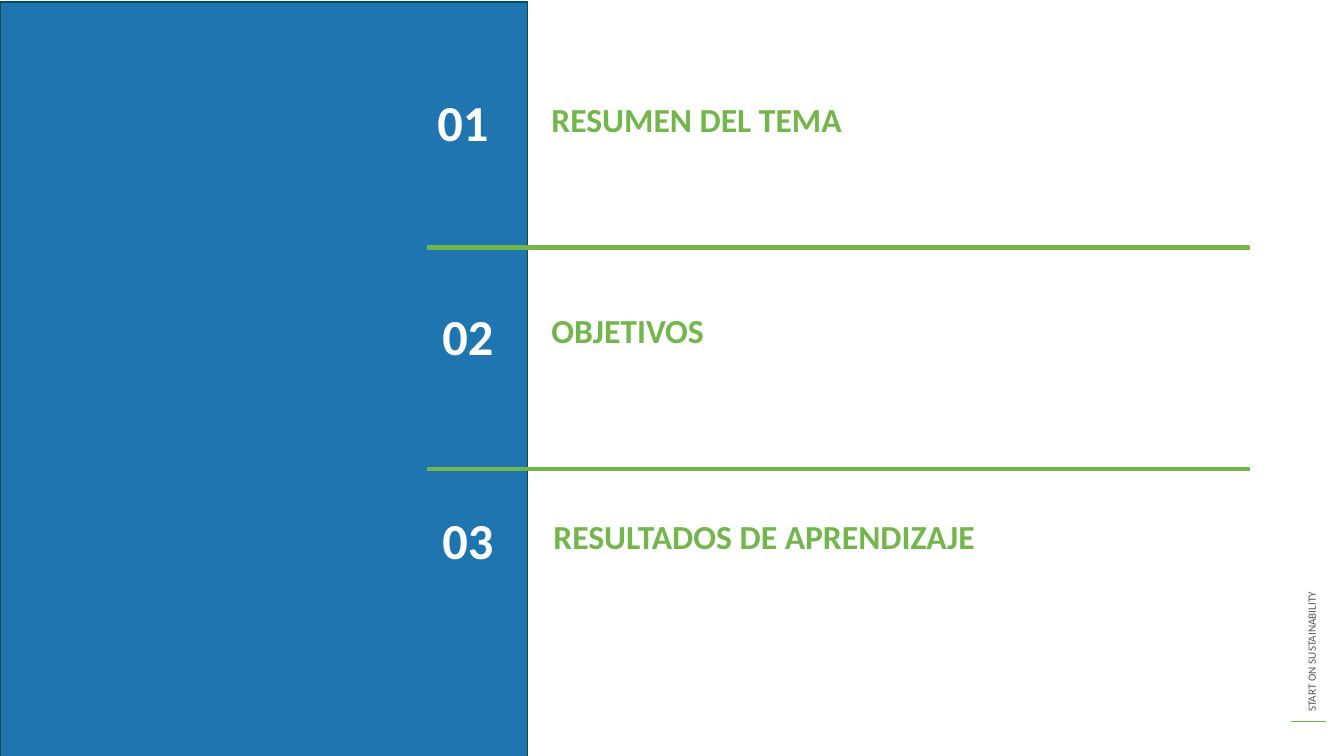
from lxml import etree
from pptx import Presentation
from pptx.dml.color import RGBColor
from pptx.enum.shapes import MSO_CONNECTOR, MSO_SHAPE
from pptx.enum.text import MSO_ANCHOR
from pptx.oxml.ns import qn
from pptx.util import Inches, Pt

RECTANGLE = MSO_SHAPE.RECTANGLE
STRAIGHT = MSO_CONNECTOR.STRAIGHT
TOP = MSO_ANCHOR.TOP

FONT = "Calibri"
BLUE, TEAL, GREEN = "1E75B0", "054F50", "73B64B"
GREY, WHITE = "595959", "FFFFFF"

# Wording, then left and top of the number and of the heading
AGENDA = [
    ("01", (4.24, 0.67), "RESUMEN DEL TEMA", (5.37, 0.93)),
    ("02", (4.29, 2.8), "OBJETIVOS", (5.37, 3.03)),
    ("03", (4.29, 4.82), "RESULTADOS DE APRENDIZAJE", (5.39, 5.07)),
]
DIVIDER_TOPS = (2.44, 4.64)


def colour(value):
    return RGBColor.from_string(value)


def add_text(page, box, words, size, ink, bold=False, spacing=1.0):
    label = page.shapes.add_textbox(*map(Inches, box))
    frame = label.text_frame
    frame.word_wrap = True
    frame.vertical_anchor = TOP
    para = frame.paragraphs[0]
    para.line_spacing = spacing
    span = para.add_run()
    span.text = words
    for name, value in {"name": FONT, "size": Pt(size), "bold": bold}.items():
        setattr(span.font, name, value)
    span.font.color.rgb = colour(ink)
    return label


def add_bar(page, box, fill, outline):
    bar = page.shapes.add_shape(RECTANGLE, *map(Inches, box))
    bar.shadow.inherit = False
    bar.fill.solid()
    bar.fill.fore_color.rgb = colour(fill)
    bar.line.color.rgb = colour(outline)
    bar.line.width = Pt(1)


def add_side_mark(page, box):
    """Place the upward-reading tagline and the short rule at the foot of the box."""
    left, top, width, height = box
    length, thickness = 4.46, 0.24
    bottom = top + height
    centre_x = left + 0.21
    tagline = add_text(
        page,
        (centre_x - length / 2, bottom - (length + thickness) / 2, length, thickness),
        "START ON SUSTAINABILITY", 8, GREY)
    tagline.rotation = 270
    ends = (left, bottom, left + width, bottom)
    rule = page.shapes.add_connector(STRAIGHT, *map(Inches, ends))
    rule.line.color.rgb = colour(GREEN)
    rule.line.width = Pt(1)
    etree.SubElement(rule.element.spPr, qn("a:effectLst"))


def add_agenda(page):
    for number, number_at, heading, heading_at in AGENDA:
        add_text(page, (*heading_at, 7.18, 0.37), heading, 24, GREEN, bold=True)
        add_text(page, (*number_at, 1.35, 1.04), number, 36, WHITE, bold=True, spacing=1.3)
    for top in DIVIDER_TOPS:
        add_bar(page, (4.24, top, 8.15, 0.03), GREEN, GREEN)


def main():
    deck = Presentation()
    deck.slide_width, deck.slide_height = Inches(13.33), Inches(7.5)
    page = deck.slides.add_slide(deck.slide_layouts[6])
    add_side_mark(page, (12.8, 2.7, 0.35, 4.46))
    add_bar(page, (0, 0.02, 5.23, 7.5), BLUE, TEAL)
    add_agenda(page)
    deck.save("out.pptx")


if __name__ == "__main__":
    main()
